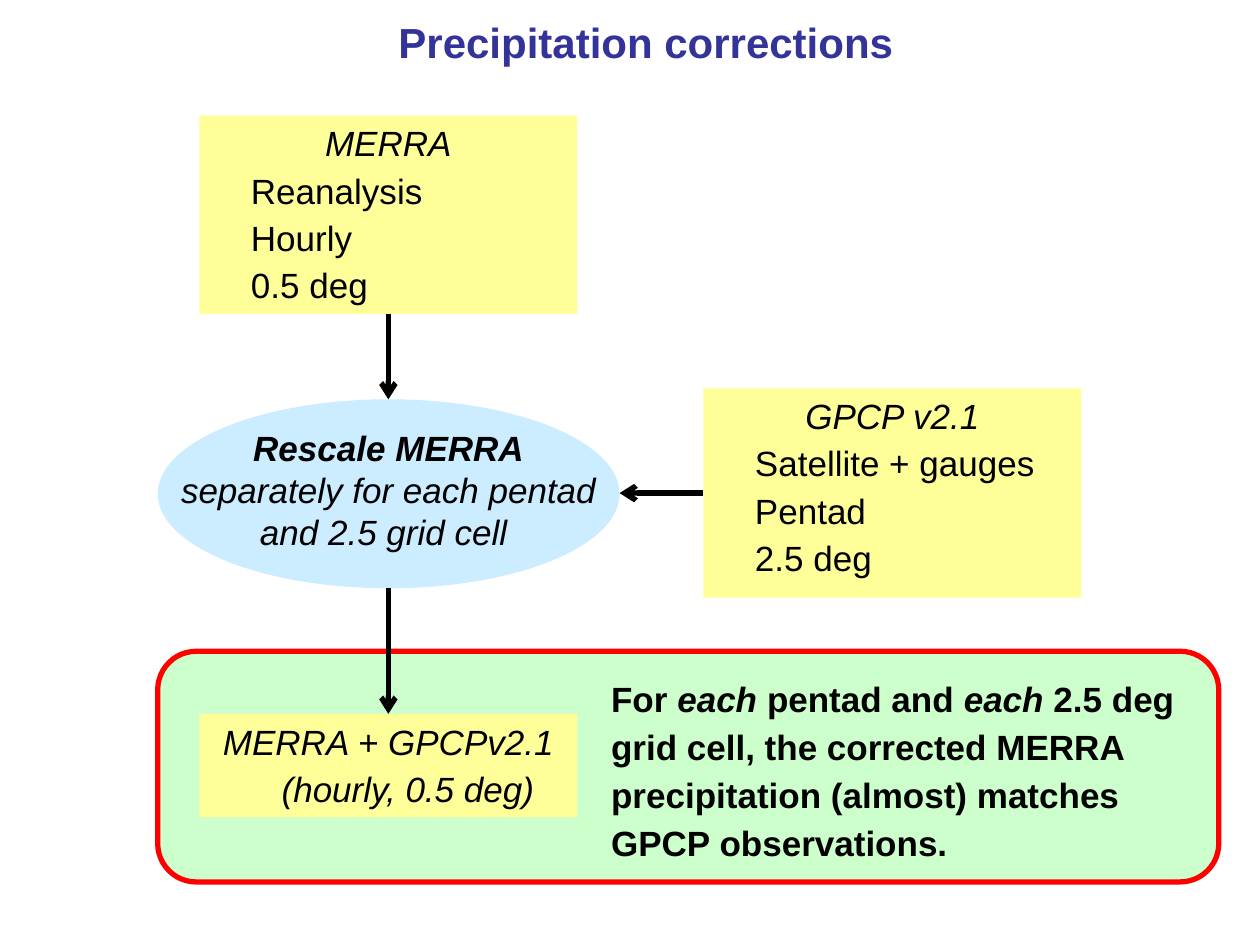
"""Build the flow diagram slide on precipitation corrections."""
from lxml import etree
from pptx import Presentation, util as u
from pptx.dml.color import RGBColor
from pptx.enum import shapes, text
from pptx.oxml.ns import qn

NAVY = RGBColor(0x33, 0x33, 0x99)
BLACK = RGBColor(0, 0, 0)
RED = RGBColor(0xFF, 0, 0)
YELLOW = RGBColor(0xFF, 0xFF, 0x99)
GREEN = RGBColor(0xCC, 0xFF, 0xCC)
SKY = RGBColor(0xCC, 0xEC, 0xFF)

CENTER, LEFT = text.PP_ALIGN.CENTER, text.PP_ALIGN.LEFT
KIND = shapes.MSO_SHAPE
FRAME = {"word_wrap": True, "auto_size": text.MSO_AUTO_SIZE.NONE,
         "vertical_anchor": text.MSO_ANCHOR.TOP}
BODY = {"name": "Arial", "size": u.Pt(20), "bold": False, "italic": False}


def write(frame, paragraphs, color=BLACK, **spacing):
    """Fill a frame from (alignment, level, [(text, font changes), ...]) entries."""
    for key, value in FRAME.items():
        setattr(frame, key, value)
    for index, (alignment, level, runs) in enumerate(paragraphs):
        paragraph = frame.add_paragraph() if index else frame.paragraphs[0]
        layout = {"alignment": alignment, "level": level, "space_before": u.Pt(0), **spacing}
        for key, value in layout.items():
            setattr(paragraph, key, value)
        if level:
            properties = paragraph._p.get_or_add_pPr()
            properties.set("marL", str(u.Cm(0.79)))
            properties.set("indent", "0")
        for words, changes in runs:
            run = paragraph.add_run()
            run.text = words
            run.font.color.rgb = color
            for key, value in {**BODY, **changes}.items():
                setattr(run.font, key, value)


def block(kind, box, fill):
    """Add a plain filled shape without outline."""
    shape = slide.shapes.add_shape(kind, *map(u.Cm, box))
    shape.shadow.inherit = False
    shape.fill.solid()
    shape.fill.fore_color.rgb = fill
    shape.line.fill.background()
    return shape


deck = Presentation()
deck.slide_width, deck.slide_height = u.Cm(25.4), u.Cm(19.05)
slide = deck.slides.add_slide(deck.slide_layouts[5])

title = slide.shapes.title
title.left, title.top, title.width, title.height = map(u.Cm, (0.64, 0.21, 24.76, 1.27))
write(title.text_frame,
      [(CENTER, 0, [("Precipitation corrections", {"size": u.Pt(24), "bold": True})])], NAVY)

outcome = block(KIND.ROUNDED_RECTANGLE, (3.18, 13.13, 21.39, 4.65), GREEN)
outcome.line.color.rgb = RED
outcome.line.width = u.Pt(3)

datasets = [
    ((4.02, 2.33, 7.62, 4), "MERRA", LEFT, {}, ["Reanalysis", "Hourly", "0.5 deg"]),
    ((14.18, 7.83, 7.62, 4.22), "GPCP v2.1", LEFT, {},
     ["Satellite + gauges", "Pentad", "2.5 deg"]),
    ((4.02, 14.39, 7.62, 2.09), "MERRA + GPCPv2.1", CENTER, {"italic": True},
     ["(hourly, 0.5 deg)"]),
]
boxes = []
for place, heading, alignment, style, details in datasets:
    box = block(KIND.RECTANGLE, place, YELLOW)
    write(box.text_frame,
          [(CENTER, 0, [(heading, {"italic": True})])]
          + [(alignment, 1, [(detail, style)]) for detail in details],
          space_after=u.Pt(3))
    boxes.append(box)
merra, gpcp, corrected = boxes

conclusion = slide.shapes.add_textbox(*map(u.Cm, (12.07, 13.42, 12.07, 4.17)))
strong, stressed = {"bold": True}, {"bold": True, "italic": True}
write(conclusion.text_frame, [(LEFT, 0, [
    ("For ", strong), ("each ", stressed), ("pentad and ", strong), ("each ", stressed),
    ("2.5 deg grid cell, the corrected MERRA precipitation (almost) matches "
     "GPCP observations.", strong)])], line_spacing=1.14)

rescale = block(KIND.OVAL, (3.18, 8.05, 9.31, 3.81), SKY)
step = slide.shapes.add_textbox(rescale.left, u.Cm(8.47), rescale.width, u.Cm(2.82))
write(step.text_frame, [
    (CENTER, 0, [("Rescale MERRA", stressed)]),
    (CENTER, 0, [("separately for each pentad and 2.5 grid cell ", {"italic": True})])])

axis = merra.left + merra.width // 2
middle = gpcp.top + gpcp.height // 2
rescale_right = rescale.left + rescale.width
rescale_bottom = rescale.top + rescale.height
flows = [
    ((axis, merra.top + merra.height, axis, rescale.top), (merra, 2), None),
    ((gpcp.left, middle, rescale_right, middle), (gpcp, 1), None),
    ((axis, rescale_bottom, axis, corrected.top), None, (corrected, 0)),
]
for ends, source, target in flows:
    arrow = slide.shapes.add_connector(shapes.MSO_CONNECTOR.STRAIGHT, *ends)
    if source:
        arrow.begin_connect(*source)
    if target:
        arrow.end_connect(*target)
    arrow.line.color.rgb = BLACK
    arrow.line.width = u.Pt(3)
    etree.SubElement(arrow.line._get_or_add_ln(), qn("a:tailEnd"), type="arrow")
    etree.SubElement(arrow._element.spPr, qn("a:effectLst"))

deck.save("out.pptx")
